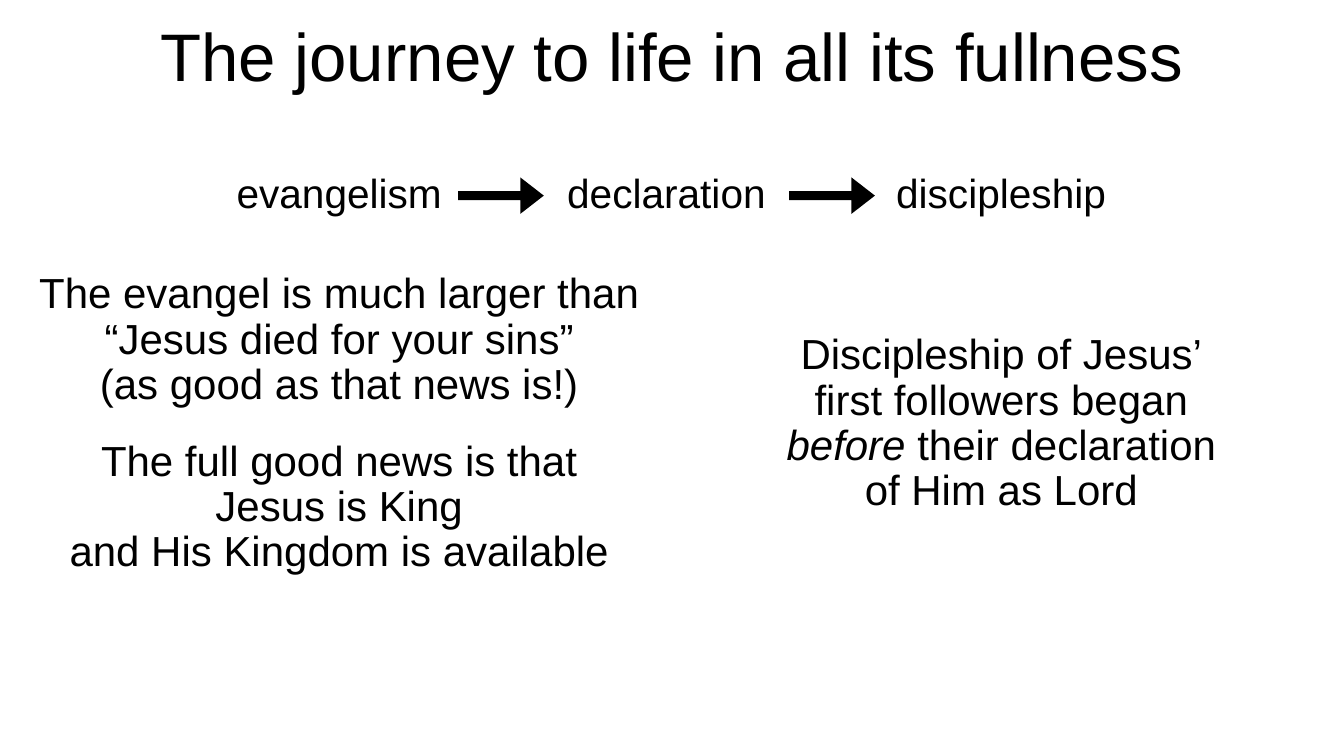
"""Build the slide about the journey from evangelism to discipleship."""
from dataclasses import dataclass

from pptx import Presentation
from pptx.dml.color import RGBColor
from pptx.enum.shapes import MSO_SHAPE
from pptx.enum.text import MSO_ANCHOR, MSO_AUTO_SIZE, PP_ALIGN
from pptx.util import Pt


@dataclass(frozen=True)
class Theme:
    font: str = "Arial"
    ink: RGBColor = RGBColor(0, 0, 0)
    paper: RGBColor = RGBColor(255, 255, 255)
    title: int = 96
    step: int = 58
    body: int = 60


theme = Theme()


def write(sp, paragraphs, size, spacing=0.9, wrap=True, italic=None):
    tf = sp.text_frame
    tf.word_wrap = wrap
    tf.auto_size = MSO_AUTO_SIZE.NONE
    tf.vertical_anchor = MSO_ANCHOR.MIDDLE
    tf.margin_left = tf.margin_right = tf.margin_top = tf.margin_bottom = Pt(3)
    for i, lines in enumerate(paragraphs):
        p = tf.add_paragraph() if i else tf.paragraphs[0]
        p.alignment = PP_ALIGN.CENTER
        p.line_spacing = spacing
        p.space_before = Pt(45 if i else 0)
        for j, line in enumerate(lines):
            if j:
                p.add_line_break()
            for part in [line] if isinstance(line, str) else line:
                r = p.add_run()
                r.text = part
                r.font.name = theme.font
                r.font.size = Pt(size)
                r.font.color.rgb = theme.ink
                r.font.italic = part == italic


prs = Presentation()
prs.slide_width, prs.slide_height = Pt(1920), Pt(1080)
s = prs.slides.add_slide(prs.slide_layouts[5])
s.background.fill.solid()
s.background.fill.fore_color.rgb = theme.paper

title = s.shapes.title
title.left, title.top, title.width, title.height = Pt(72), Pt(26), Pt(1776), Pt(126)
write(title, [["The journey to life in all its fullness"]], theme.title, spacing=0.8)

steps = [("evangelism", 322, 325), ("declaration", 788, 328), ("discipleship", 1262, 336)]
for text, left, width in steps:
    sp = s.shapes.add_textbox(Pt(left), Pt(240), Pt(width), Pt(79))
    write(sp, [[text]], theme.step, wrap=False)

for left in (654.5, 1127.5):
    arrow = s.shapes.add_shape(MSO_SHAPE.RIGHT_ARROW, Pt(left), Pt(253.5), Pt(122.4), Pt(52))
    arrow.adjustments[0], arrow.adjustments[1] = 0.253, 0.644
    arrow.shadow.inherit = False
    arrow.fill.solid()
    arrow.fill.fore_color.rgb = theme.ink
    arrow.line.fill.background()

good_news = [
    ["The evangel is much larger than “Jesus died for your sins”", "(as good as that news is!)"],
    ["The full good news is that", "Jesus is King", "and His Kingdom is available"],
]
first_followers = [
    ["Discipleship of Jesus’", "first followers began", ("before", " their declaration"), "of Him as Lord"],
]
notes = [(good_news, 21, 374, 927, 464), (first_followers, 1011, 464, 839, 284)]
for paragraphs, left, top, width, height in notes:
    sp = s.shapes.add_textbox(Pt(left), Pt(top), Pt(width), Pt(height))
    write(sp, paragraphs, theme.body, italic="before")

prs.save("out.pptx")
